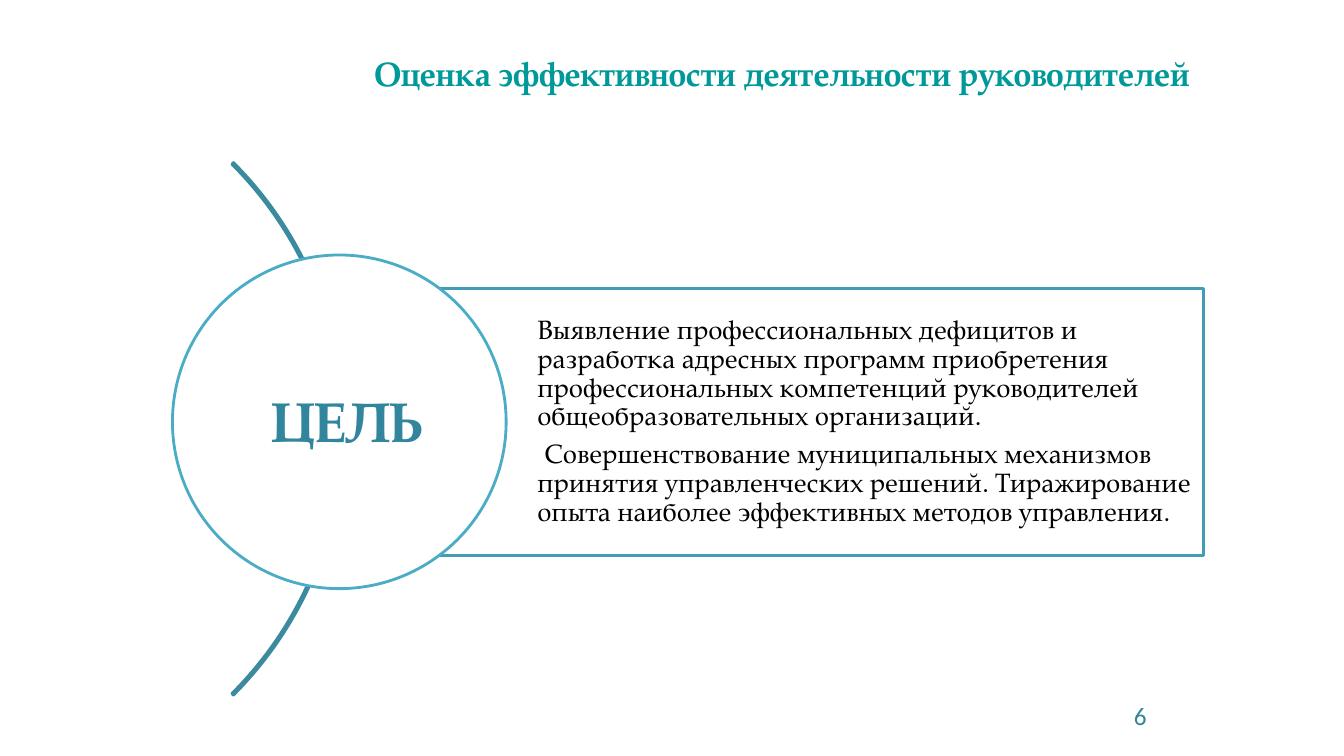
"""Build the slide on the goal of evaluating school leaders."""
import pptx
import pptx.dml.color
import pptx.enum.shapes
import pptx.enum.text
import pptx.util

RGB = pptx.dml.color.RGBColor
SHAPE = pptx.enum.shapes.MSO_SHAPE
ANCHOR = pptx.enum.text.MSO_ANCHOR
ALIGN = pptx.enum.text.PP_ALIGN
Inches, Pt = pptx.util.Inches, pptx.util.Pt

GREEN = RGB(0x00, 0x99, 0x99)
TEAL = RGB(0x31, 0x85, 0x9C)
ARC_TEAL = RGB(0x3C, 0x8A, 0x9F)
PANEL_TEAL = RGB(0x44, 0x9C, 0xB4)
RING_TEAL = RGB(0x4B, 0xAC, 0xC6)
WHITE = RGB(0xFF, 0xFF, 0xFF)
BLACK = RGB(0x00, 0x00, 0x00)
SERIF, SANS = "TeX Gyre Pagella", "Calibri"

TITLE = "Оценка эффективности деятельности руководителей"
GOAL = "ЦЕЛЬ"
NUMBER = "6"
AIMS = [
    "Выявление профессиональных дефицитов и разработка адресных программ "
    "приобретения профессиональных компетенций руководителей "
    "общеобразовательных организаций.",
    "Совершенствование муниципальных механизмов принятия управленческих "
    "решений. Тиражирование опыта наиболее эффективных методов управления.",
]

WIDTH, HEIGHT = Inches(13.33), Inches(7.5)
BOXES = {
    "title": (19.65, 2.8, 77.04, 13.6),
    "number": (68.57, 92, 17.48, 5.33),
    "arc": (-30.46, 6.93, 56.04, 99.6),
    "panel": (23.48, 38.13, 66.09, 35.33),
    "ring": (12.83, 33.73, 24.83, 44.13),
    "goal": (16.05, 39.6, 19.58, 21.07),
}


def place(name):
    """Turn percentages of the slide into lengths."""
    sides = (WIDTH, HEIGHT, WIDTH, HEIGHT)
    return [int(side * share / 100) for side, share in zip(sides, BOXES[name])]


def write(sp, texts, size, color, font=SERIF, bold=False,
          align=ALIGN.CENTER, anchor=ANCHOR.MIDDLE):
    """Fill a shape with evenly formatted paragraphs."""
    tf = sp.text_frame
    tf.word_wrap = True
    tf.vertical_anchor = anchor
    for i, text in enumerate(texts):
        p = tf.paragraphs[0] if i == 0 else tf.add_paragraph()
        p.text = text
        p.alignment = align
        p.font.name, p.font.size, p.font.bold = font, Pt(size), bold
        p.font.color.rgb = color
    return tf


def outline(s, name, kind, color, filled=True):
    """Add an outlined preset shape."""
    sp = s.shapes.add_shape(kind, *place(name))
    sp.shadow.inherit = False
    if filled:
        sp.fill.solid()
        sp.fill.fore_color.rgb = WHITE
    else:
        sp.fill.background()
    sp.line.color.rgb = color
    sp.line.width = Pt(2)
    return sp


def main():
    """Draw and save the slide."""
    prs = pptx.Presentation()
    prs.slide_width, prs.slide_height = WIDTH, HEIGHT
    s = prs.slides.add_slide(prs.slide_layouts[6])

    write(s.shapes.add_textbox(*place("title")), [TITLE], 24, GREEN, bold=True)
    write(s.shapes.add_textbox(*place("number")), [NUMBER], 18, TEAL,
          font=SANS, align=ALIGN.RIGHT)

    arc = outline(s, "arc", SHAPE.BLOCK_ARC, ARC_TEAL, filled=False)
    for i, value in enumerate((189, 27, 0.003)):
        arc.adjustments[i] = value

    panel = outline(s, "panel", SHAPE.RECTANGLE, PANEL_TEAL)
    tf = write(panel, AIMS, 19, BLACK, align=ALIGN.LEFT)
    tf.margin_left = Inches(2.2)
    tf.margin_top = tf.margin_right = tf.margin_bottom = Inches(0.05)
    for p in tf.paragraphs:
        p.line_spacing = 0.9
        p.space_after = Pt(6.65)
    tf.paragraphs[1]._p.get_or_add_pPr().set("indent", str(Inches(0.07)))

    outline(s, "ring", SHAPE.OVAL, RING_TEAL)
    write(s.shapes.add_textbox(*place("goal")), [GOAL], 40, TEAL, bold=True,
          anchor=ANCHOR.BOTTOM)
    prs.save("out.pptx")


if __name__ == "__main__":
    main()
